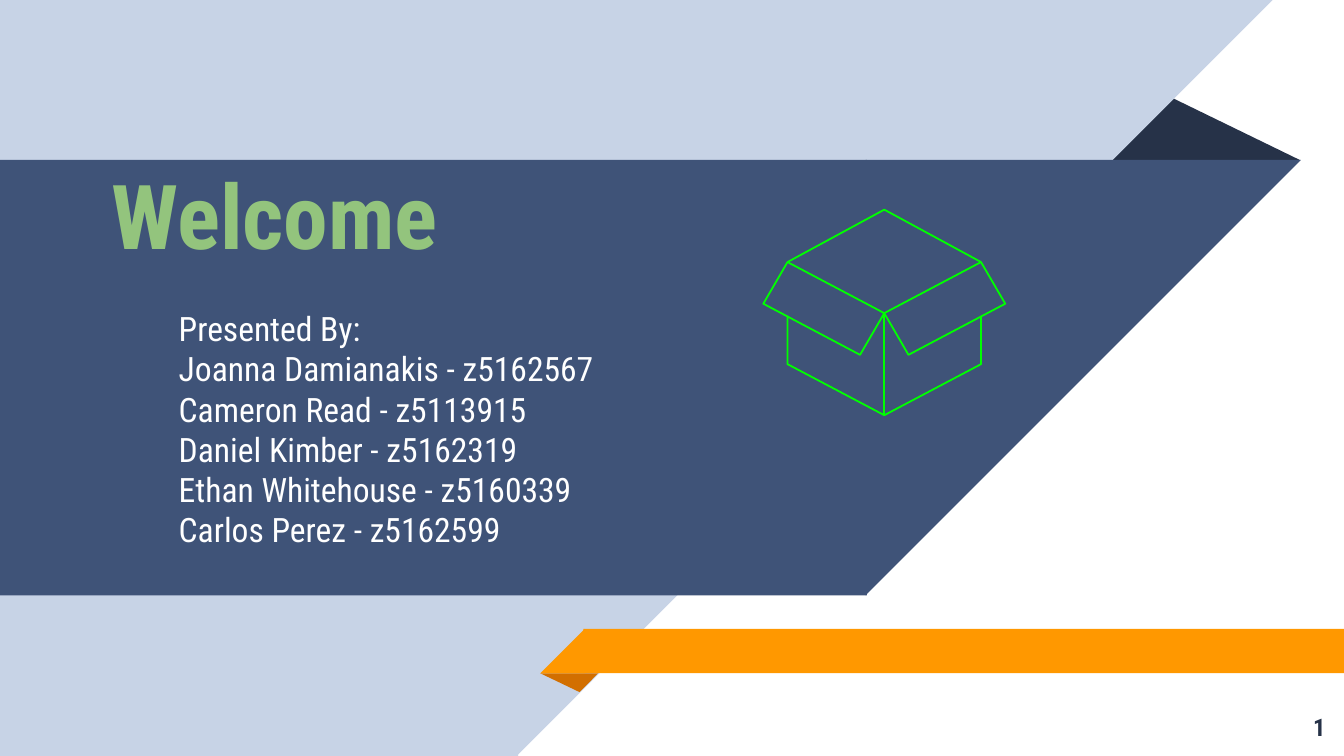
from lxml import etree
from pptx import Presentation
from pptx.dml.color import RGBColor
from pptx.enum.shapes import MSO_CONNECTOR, MSO_SHAPE
from pptx.enum.text import MSO_ANCHOR, MSO_AUTO_SIZE, PP_ALIGN
from pptx.oxml.ns import qn
from pptx.util import Inches, Pt

RECTANGLE = MSO_SHAPE.RECTANGLE
TRIANGLE = MSO_SHAPE.ISOSCELES_TRIANGLE
RIGHT_TRIANGLE = MSO_SHAPE.RIGHT_TRIANGLE
STRAIGHT = MSO_CONNECTOR.STRAIGHT
MIDDLE = MSO_ANCHOR.MIDDLE
NO_AUTOFIT = MSO_AUTO_SIZE.NONE
LEFT, RIGHT = PP_ALIGN.LEFT, PP_ALIGN.RIGHT

FONT = "Roboto Condensed"
COLORS = {
    "pale": "C7D3E6",
    "navy": "3F5378",
    "ink": "263248",
    "orange": "FF9800",
    "rust": "D26F00",
    "green": "93C47D",
    "neon": "00FF00",
    "white": "FFFFFF",
}
SLIDE_WIDTH = 10
SLIDE_HEIGHT = SLIDE_WIDTH * 9 / 16
FOLD_APEX = 0.32
OVERLAP = 0.01
PRESENTERS = [
    "Joanna Damianakis - z5162567",
    "Cameron Read - z5113915",
    "Daniel Kimber - z5162319",
    "Ethan Whitehouse - z5160339",
    "Carlos Perez - z5162599",
]


def color(name):
    return RGBColor.from_string(COLORS[name])


def add_filled(slide, kind, left, top, width, height, fill, rotation=0):
    shape = slide.shapes.add_shape(
        kind, Inches(left), Inches(top), Inches(width), Inches(height))
    shape.shadow.inherit = False
    shape.fill.solid()
    shape.fill.fore_color.rgb = color(fill)
    shape.line.fill.background()
    shape.rotation = rotation
    if kind == TRIANGLE:
        shape.adjustments[0] = FOLD_APEX
    return shape


def write_text(paragraph, text, size=18, fill="white", bold=False,
               align=LEFT, indent=0, before=0):
    paragraph.alignment = align
    paragraph.space_before = Pt(before)
    paragraph.line_spacing = 1.0
    paragraph._p.get_or_add_pPr().set("indent", str(Inches(indent)))
    run = paragraph.add_run()
    run.text = text
    run.font.name = FONT
    run.font.size = Pt(size)
    run.font.bold = bold
    run.font.color.rgb = color(fill)


def prepare_frame(shape, bottom=0.1):
    frame = shape.text_frame
    frame.word_wrap = True
    frame.auto_size = NO_AUTOFIT
    frame.vertical_anchor = MIDDLE
    frame.margin_left = frame.margin_right = frame.margin_top = Inches(0.1)
    frame.margin_bottom = Inches(bottom)
    return frame


def add_slanted_band(slide, left, top, width, height, fill):
    straight = width - height
    add_filled(slide, RECTANGLE, left, top, straight + OVERLAP, height, fill)
    add_filled(slide, RIGHT_TRIANGLE, left + straight, top, height, height,
               fill, rotation=90)


def add_ribbon(slide, left, top, width, height):
    add_filled(slide, TRIANGLE, left, top + height, 0.43, 0.14, "rust",
               rotation=180)
    add_filled(slide, RECTANGLE, left + height - OVERLAP, top,
               width - height + OVERLAP, height, "orange")
    add_filled(slide, RIGHT_TRIANGLE, left, top, height, height, "orange",
               rotation=270)


def add_title(slide, left, top, width, height):
    title = slide.shapes.title
    title.left, title.top = Inches(left), Inches(top)
    title.width, title.height = Inches(width), Inches(height)
    frame = prepare_frame(title, bottom=0.9)
    write_text(frame.paragraphs[0], "Welcome", size=48, fill="green", bold=True)
    write_text(frame.add_paragraph(), "Presented By:", indent=0.5, before=21.6)
    for presenter in PRESENTERS:
        write_text(frame.add_paragraph(), presenter, indent=0.5)


def add_open_box(slide, left, top, width, height):
    group = slide.shapes.add_group_shape()
    middle, side, flap = width / 2, 0.18, 0.72
    rim, front, fold = 0.39, 0.77, 1.08

    def point(x, y):
        return Inches(left + x), Inches(top + y)

    def style_line(shape):
        shape.line.color.rgb = color("neon")
        shape.line.width = Pt(0.96)

    def add_outline(points, close=False):
        start, *rest = [point(x, y) for x, y in points]
        builder = group.shapes.build_freeform(*start)
        builder.add_line_segments(rest, close=close)
        shape = builder.convert_to_shape()
        shape.shadow.inherit = False
        shape.fill.background()
        style_line(shape)

    add_outline([(side, 0.79), (side, 1.15), (middle, height),
                 (width - side, 1.15), (width - side, 0.79)])
    add_outline([(width - side, rim), (middle, 0), (side, rim)])
    left_flap = [(flap, fold), (0, 0.7), (side, rim), (middle, front)]
    add_outline(left_flap, close=True)
    add_outline([(width - x, y) for x, y in left_flap], close=True)

    edge = group.shapes.add_connector(
        STRAIGHT, *point(middle, front), *point(middle, height))
    style_line(edge)
    etree.SubElement(edge._element.spPr, qn("a:effectLst"))


def add_page_number(slide, left, top, width, height):
    box = slide.shapes.add_textbox(
        Inches(left), Inches(top), Inches(width), Inches(height))
    write_text(prepare_frame(box).paragraphs[0], "1", size=13, fill="ink",
               bold=True, align=RIGHT)


def main():
    presentation = Presentation()
    presentation.slide_width = Inches(SLIDE_WIDTH)
    presentation.slide_height = Inches(SLIDE_HEIGHT)
    slide = presentation.slides.add_slide(presentation.slide_layouts[5])
    add_filled(slide, TRIANGLE, 8.25, 0.72, 1.42, 0.47, "ink")
    add_slanted_band(slide, 0, 0, 9.47, SLIDE_HEIGHT, "pale")
    add_slanted_band(slide, 0, 1.19, 9.68, 3.24, "navy")
    add_ribbon(slide, 4.02, 4.68, 6, 0.33)
    add_title(slide, 0.73, 1.42, 5.87, 3.24)
    title = slide.shapes.title._element
    title.getparent().append(title)
    add_open_box(slide, 5.68, 1.56, 1.8, 1.53)
    add_page_number(slide, 9.36, 5.19, 0.6, 0.43)
    presentation.save("out.pptx")


if __name__ == "__main__":
    main()
